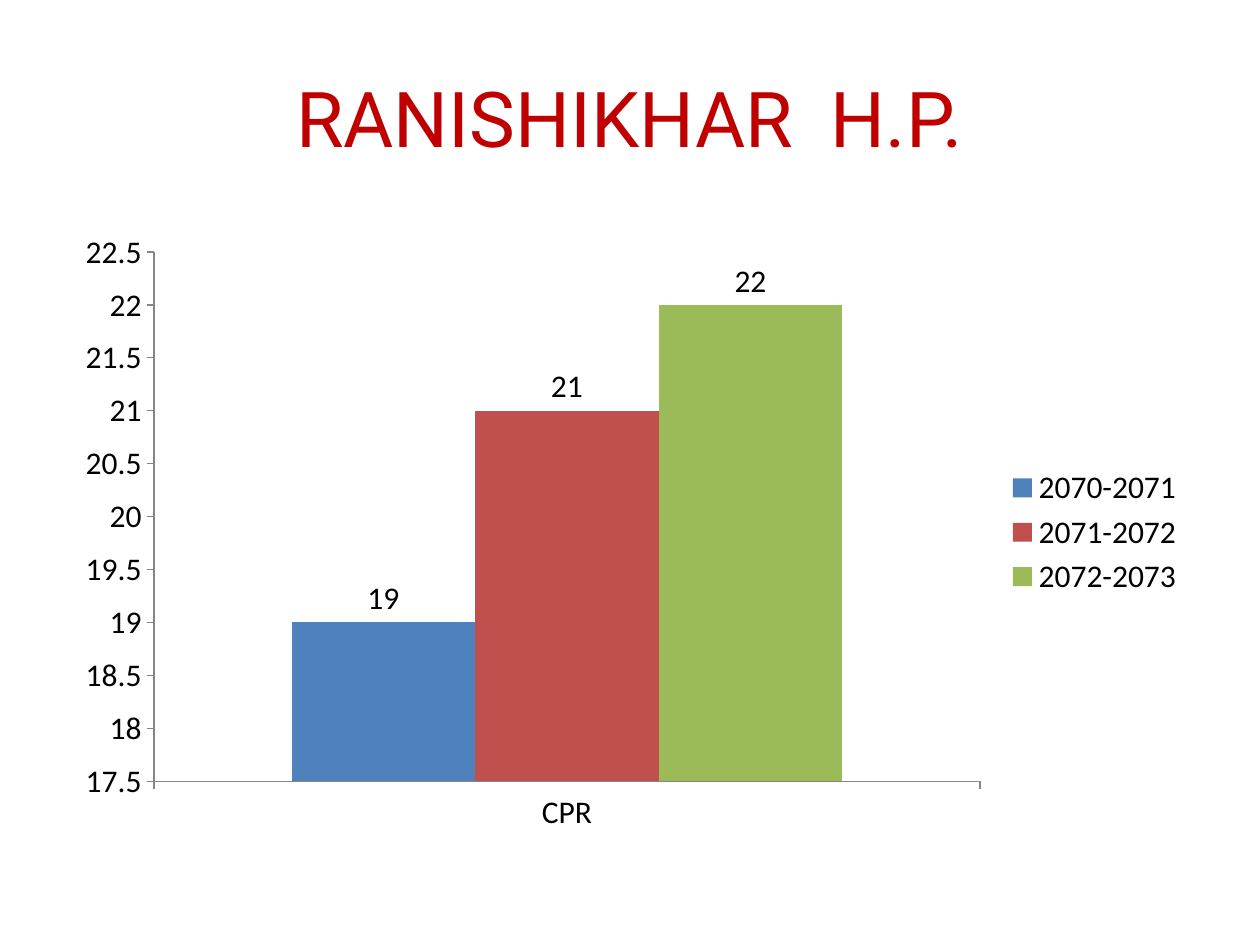
import pptx
import pptx.util
import pptx.chart.data
import pptx.dml.color
import pptx.enum.chart
import pptx.enum.text

Inches = pptx.util.Inches
Pt = pptx.util.Pt

HEADING = "RANISHIKHAR  H.P."
CATEGORIES = ["CPR"]
YEARS = [
    ("2070-2071", 19, "4F81BD"),
    ("2071-2072", 21, "C0504D"),
    ("2072-2073", 22, "9BBB59"),
]


def paint(color_format, hex_color):
    color_format.rgb = pptx.dml.color.RGBColor.from_string(hex_color)


def style_font(font, name, size, hex_color):
    font.name = name
    font.size = Pt(size)
    font.bold = False
    paint(font.color, hex_color)


def add_heading(slide):
    heading = slide.shapes.title
    heading.left, heading.top = Inches(0.5), Inches(0.3)
    heading.width, heading.height = Inches(9), Inches(1.25)
    heading.text_frame.text = HEADING
    heading.text_frame.vertical_anchor = pptx.enum.text.MSO_ANCHOR.MIDDLE
    paragraph = heading.text_frame.paragraphs[0]
    paragraph.alignment = pptx.enum.text.PP_ALIGN.CENTER
    style_font(paragraph.runs[0].font, "Roboto", 44, "C00000")


def add_cpr_chart(slide):
    cpr_data = pptx.chart.data.CategoryChartData()
    cpr_data.categories = CATEGORIES
    for year, value, _ in YEARS:
        cpr_data.add_series(year, [value])
    chart = slide.shapes.add_chart(
        pptx.enum.chart.XL_CHART_TYPE.COLUMN_CLUSTERED,
        Inches(0.5), Inches(1.75), Inches(9), Inches(4.95), cpr_data,
    ).chart
    style_font(chart.font, "Calibri", 18, "000000")
    chart.has_title = False
    chart.has_legend = True
    chart.legend.position = pptx.enum.chart.XL_LEGEND_POSITION.RIGHT
    chart.legend.include_in_layout = False

    for axis in (chart.category_axis, chart.value_axis):
        axis.has_major_gridlines = False
        axis.major_tick_mark = pptx.enum.chart.XL_TICK_MARK.OUTSIDE
        paint(axis.format.line.color, "868686")
    chart.value_axis.minimum_scale = 17.5
    chart.value_axis.maximum_scale = 22.5
    chart.value_axis.major_unit = 0.5
    chart.value_axis.tick_labels.number_format = "General"
    chart.value_axis.tick_labels.number_format_is_linked = False

    plot = chart.plots[0]
    plot.gap_width = 150
    plot.overlap = 0
    plot.vary_by_categories = False
    for series, (_, _, hex_color) in zip(plot.series, YEARS):
        series.format.fill.solid()
        paint(series.format.fill.fore_color, hex_color)
        series.data_labels.show_value = True
        series.data_labels.position = pptx.enum.chart.XL_LABEL_POSITION.OUTSIDE_END


def main():
    presentation = pptx.Presentation()
    presentation.slide_width = Inches(10)
    presentation.slide_height = Inches(7.5)
    slide = presentation.slides.add_slide(presentation.slide_layouts[5])
    add_heading(slide)
    add_cpr_chart(slide)
    presentation.save("out.pptx")


if __name__ == "__main__":
    main()
